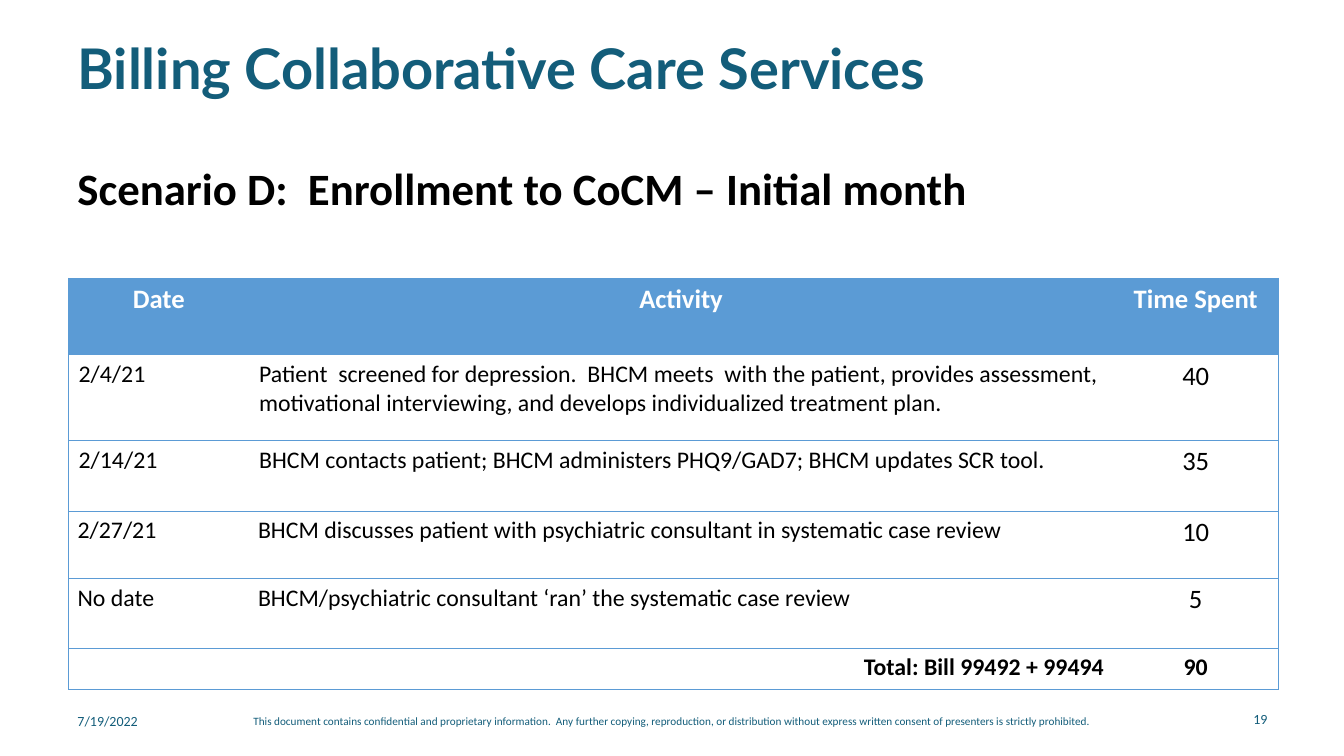
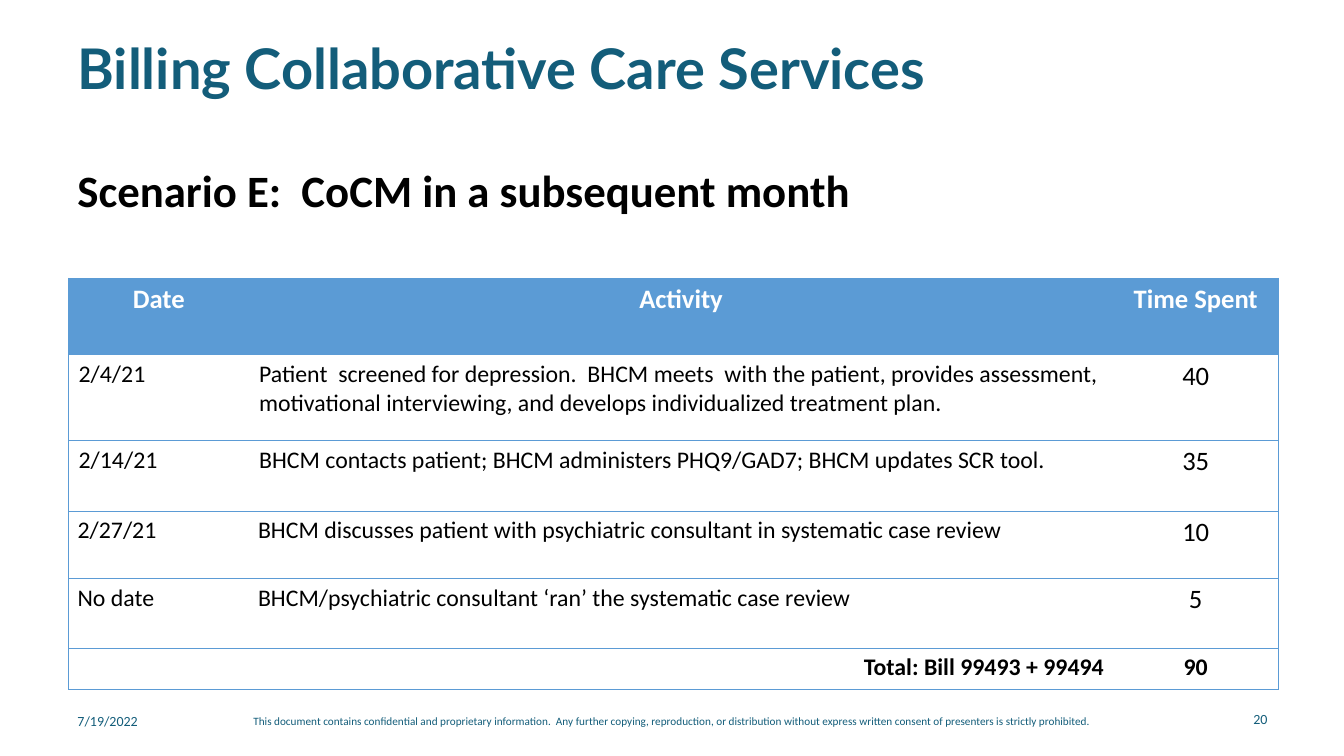
from lxml.etree import SubElement
from pptx import Presentation
from pptx.dml.color import RGBColor
from pptx.enum.text import MSO_ANCHOR as Anchor, PP_ALIGN as Align
from pptx.oxml.ns import qn
from pptx.util import Inches, Pt

TEAL, BLUE, BLACK, WHITE = "135D7A", "5B9BD5", "000000", "FFFFFF"
BODY_FONT, TITLE_FONT = "Calibri", "Lato"
TITLE = "Billing Collaborative Care Services"
DATE = "7/19/2022"
NOTICE = (
    "This document contains confidential and proprietary information.  Any further copying, "
    "reproduction, or distribution without express written consent of presenters is strictly prohibited."
)

TABLE_BOX = (0.68, 2.76, 12, 4.08)
COLUMN_WIDTHS = (1.79, 8.57, 1.64)
ROW_HEIGHTS = (0.76, 0.85, 0.7, 0.67, 0.69, 0.41)
HEADINGS = ("Date", "Activity", "Time Spent")
VISITS = [
    ("2/4/21", "Patient  screened for depression.  BHCM meets  with the patient, provides assessment, "
               "motivational interviewing, and develops individualized treatment plan.", "40"),
    ("2/14/21", "BHCM contacts patient; BHCM administers PHQ9/GAD7; BHCM updates SCR tool.", "35"),
    ("2/27/21", "BHCM discusses patient with psychiatric consultant in systematic case review", "10"),
    ("No date", "BHCM/psychiatric consultant ‘ran’ the systematic case review", "5"),
]
SCENARIOS = [
    ("Scenario D:  Enrollment to CoCM – Initial month", 1.61, "Total: Bill 99492 + 99494", "19"),
    ("Scenario E:  CoCM in a subsequent month", 1.63, "Total: Bill 99493 + 99494", "20"),
]


def rgb(value):
    return RGBColor.from_string(value)


def write(frame, text, size, color, bold=False, align=Align.LEFT, font=BODY_FONT):
    frame.text = text
    paragraph = frame.paragraphs[0]
    paragraph.alignment = align
    for run in paragraph.runs:
        run.font.size = Pt(size)
        run.font.name = font
        run.font.bold = bold
        run.font.color.rgb = rgb(color)
    return paragraph


def add_text(slide, box, text, size, color, anchor=Anchor.TOP, **style):
    frame = slide.shapes.add_textbox(*map(Inches, box)).text_frame
    frame.word_wrap = True
    frame.vertical_anchor = anchor
    return write(frame, text, size, color, **style)


def set_borders(cell, visible_sides):
    properties = cell._tc.get_or_add_tcPr()
    for side in "LRTB":
        border = SubElement(properties, qn(f"a:ln{side}"), w=str(Pt(0.5)))
        if side in visible_sides:
            fill = SubElement(border, qn("a:solidFill"))
            SubElement(fill, qn("a:srgbClr"), val=BLUE)
        else:
            SubElement(border, qn("a:noFill"))


def cell_style(row, column, last_row):
    if row == 0:
        return dict(size=19, color=WHITE, bold=True, align=Align.CENTER)
    total = row == last_row
    align = (Align.LEFT, Align.RIGHT if total else Align.LEFT, Align.CENTER)[column]
    size = 19 if column == 2 and not total else 17
    return dict(size=size, color=BLACK, bold=total, align=align)


def add_activity_table(slide, box, total):
    rows = [HEADINGS, *VISITS, ("", total, str(sum(int(visit[2]) for visit in VISITS)))]
    table = slide.shapes.add_table(len(rows), len(HEADINGS), *map(Inches, box)).table
    table.horz_banding = False
    for column, width in zip(table.columns, COLUMN_WIDTHS):
        column.width = Inches(width)
    for row, height in zip(table.rows, ROW_HEIGHTS):
        row.height = Inches(height)
    for r, texts in enumerate(rows):
        for c, text in enumerate(texts):
            cell = table.cell(r, c)
            cell.margin_left = cell.margin_right = Inches(0.1 if r < 3 else 0.09)
            set_borders(cell, "TB" + ("L", "", "R")[c])
            cell.fill.solid()
            cell.fill.fore_color.rgb = rgb(WHITE if r else BLUE)
            write(cell.text_frame, text, **cell_style(r, c, len(rows) - 1))


def add_headings(slide, scenario, scenario_top):
    title = add_text(slide, (0.67, 0.4, 11.75, 0.62), TITLE, 40, TEAL,
                     anchor=Anchor.MIDDLE, bold=True, font=TITLE_FONT)
    subtitle = add_text(slide, (0.67, scenario_top, 12, 0.6), scenario, 32, BLACK, bold=True)
    title.line_spacing = subtitle.line_spacing = 0.9


def add_footer(slide, number):
    add_text(slide, (0.67, 7.02, 1.01, 0.4), DATE, 10, TEAL)
    add_text(slide, (1.68, 7.04, 9.98, 0.4), NOTICE, 8, TEAL, align=Align.CENTER)
    add_text(slide, (11.66, 7, 1.01, 0.4), number, 10, TEAL, align=Align.RIGHT)


def add_scenario_slide(deck, scenario, scenario_top, total, number):
    slide = deck.slides.add_slide(deck.slide_layouts[6])
    add_headings(slide, scenario, scenario_top)
    add_activity_table(slide, TABLE_BOX, total)
    add_footer(slide, number)


def main():
    deck = Presentation()
    deck.slide_width, deck.slide_height = Inches(13.33), Inches(7.5)
    for scenario in SCENARIOS:
        add_scenario_slide(deck, *scenario)
    deck.save("out.pptx")


if __name__ == "__main__":
    main()
